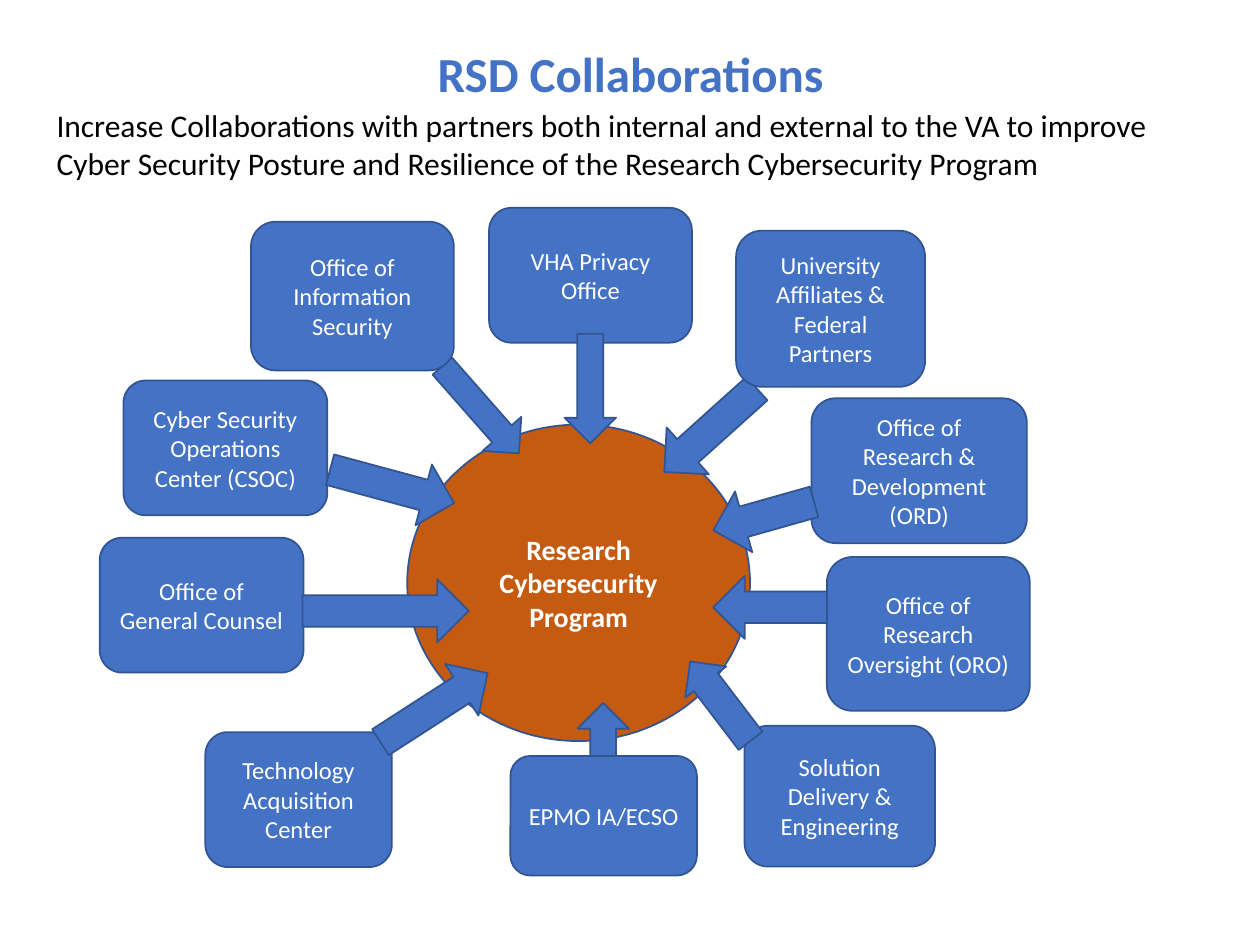
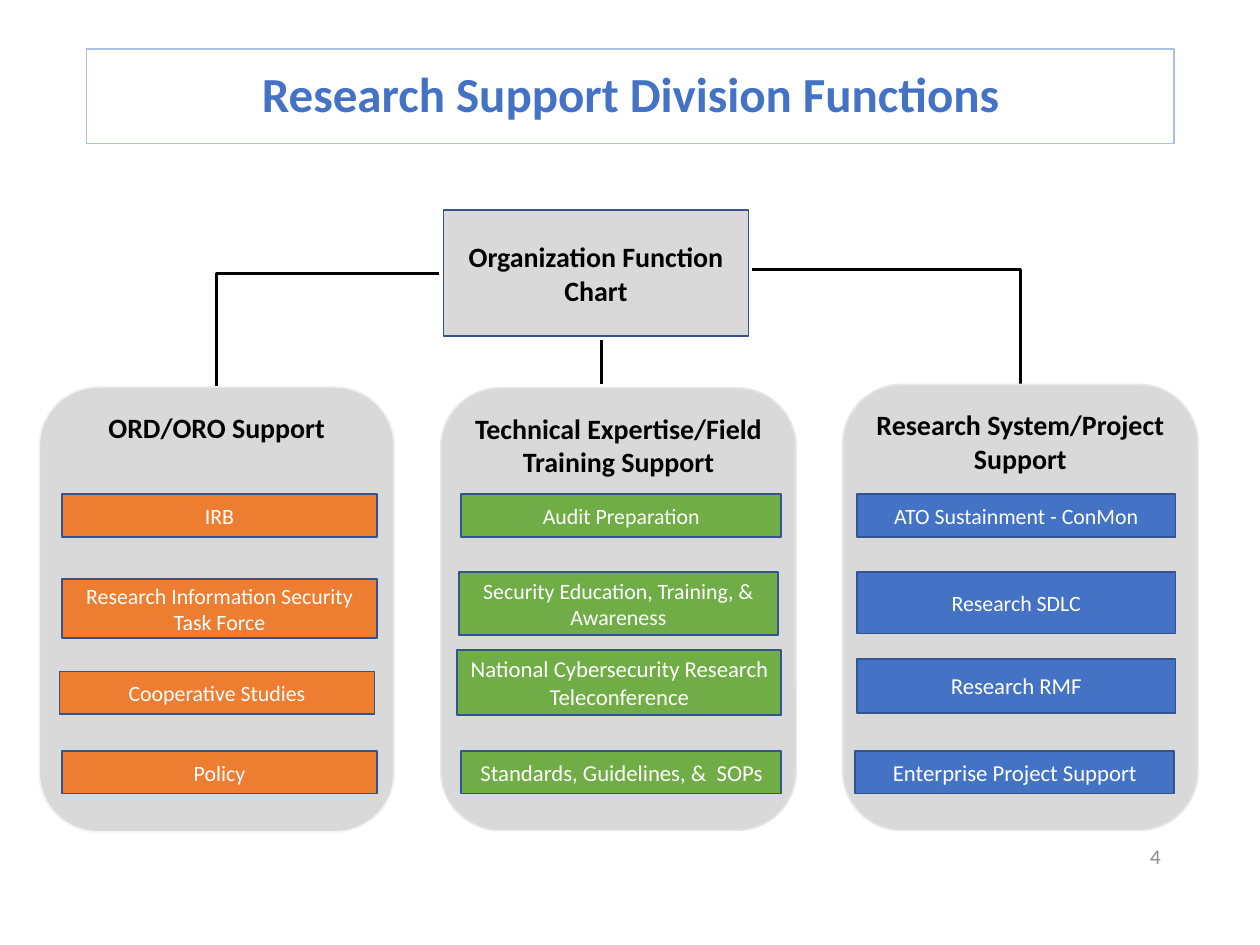
from lxml import etree
from pptx import Presentation
from pptx.dml.color import RGBColor
from pptx.enum.shapes import MSO_CONNECTOR, MSO_SHAPE
from pptx.enum.text import MSO_ANCHOR, PP_ALIGN
from pptx.oxml.ns import qn
from pptx.util import Cm, Pt

RECTANGLE, ROUNDED = MSO_SHAPE.RECTANGLE, MSO_SHAPE.ROUNDED_RECTANGLE
ELLIPSE, DOWN_ARROW = MSO_SHAPE.OVAL, MSO_SHAPE.DOWN_ARROW
STRAIGHT, ELBOW = MSO_CONNECTOR.STRAIGHT, MSO_CONNECTOR.ELBOW
TOP, MIDDLE = MSO_ANCHOR.TOP, MSO_ANCHOR.MIDDLE
LEFT, CENTER, RIGHT = PP_ALIGN.LEFT, PP_ALIGN.CENTER, PP_ALIGN.RIGHT

FONT = "Calibri"
BLUE, NAVY, RUST = "4472C4", "325491", "C55A11"
ORANGE, GREEN = "ED7D31", "70AD47"
GRAY, PALE_BLUE, PAGE_GRAY = "D9D9D9", "ABC0E4", "8C8C8C"
WHITE, BLACK = "FFFFFF", "000000"

# Formats for each role of text
TITLE = {"size": Pt(28), "bold": True, "color": BLUE}
BODY = {"size": Pt(18), "color": BLACK}
HUB = {"size": Pt(16), "bold": True, "color": WHITE}
PARTNER = {"size": Pt(14), "color": WHITE}
HEADING = {"size": Pt(16), "bold": True, "color": BLACK}
PAGE_NUMBER = {"size": Pt(12), "color": PAGE_GRAY}

# Partner text, its box, its arrow box, arrow rotation, arrow behind the partner;
# all in cm from the corner of the diagram
PARTNERS = [
    ("Office of Information Security", (3.05, 0.28, 4.09, 3), (7.16, 2.9, 1.04, 2.34), 318.7, True),
    ("VHA Privacy Office", (7.85, 0, 4.09, 2.72), (9.37, 2.54, 1.04, 2.21), 0, False),
    ("University Affiliates & Federal Partners", (12.83, 0.46, 3.81, 3.15),
     (11.68, 3.23, 1.27, 2.51), 48, True),
    ("Office of Research & Development (ORD)", (14.35, 3.84, 4.34, 2.92),
     (12.75, 5.16, 1.27, 2.11), 74.2, False),
    ("Office of Research Oversight (ORO)", (14.66, 7.04, 4.09, 3.1),
     (12.88, 6.91, 1.27, 2.29), 90, False),
    ("Solution Delivery & Engineering", (13, 10.44, 3.84, 2.84),
     (11.99, 8.94, 1.04, 2.01), 142.7, False),
    ("EPMO IA/ECSO", (8.28, 11.05, 3.76, 2.41), (9.63, 9.98, 1.04, 1.07), 180, False),
    ("Technology Acquisition Center", (2.13, 10.57, 3.76, 2.72),
     (6.12, 8.79, 1.24, 2.57), 237.2, False),
    ("Office of General Counsel", (0, 6.65, 4.11, 2.72), (5.13, 6.45, 1.27, 3.35), 270, False),
    ("Cyber Security Operations Center (CSOC)", (0.48, 3.48, 4.11, 2.72),
     (5.26, 4.32, 1.27, 2.59), 285.1, False),
]

# Heading, top, height, outline, item colour, items (text, box in the panel, size)
PANELS = [
    ("ORD/ORO Support", 7.8, 8.97, "F2F2F2", ORANGE, [
        ("IRB", (0.46, 2.16, 6.35, 0.86), 12.5),
        ("Research Information Security Task Force", (0.46, 3.88, 6.35, 1.19), 12.5),
        ("Cooperative Studies", (0.41, 5.74, 6.35, 0.86), 12.5),
        ("Policy", (0.46, 7.34, 6.35, 0.86), 12.5)]),
    ("Technical Expertise/Field Training Support", 7.82, 8.92, "E7E6E6", GREEN, [
        ("Audit Preparation", (0.41, 2.14, 6.45, 0.86), 12.5),
        ("Security Education, Training, & Awareness", (0.36, 3.71, 6.43, 1.27), 12.5),
        ("National Cybersecurity Research Teleconference", (0.33, 5.29, 6.53, 1.3), 13),
        ("Standards, Guidelines, &  SOPs", (0.41, 7.32, 6.45, 0.86), 13)]),
    ("Research System/Project Support", 7.75, 8.99, "E7E6E6", BLUE, [
        ("ATO Sustainment - ConMon", (0.28, 2.21, 6.43, 0.86), 12.5),
        ("Research SDLC", (0.28, 3.78, 6.43, 1.24), 12.5),
        ("Research RMF", (0.28, 5.53, 6.43, 1.09), 13),
        ("Enterprise Project Support", (0.25, 7.39, 6.43, 0.86), 13)]),
]
PANEL_LEFT, PANEL_STEP, PANEL_WIDTH = 0.79, 8.1, 7.16


def rgb(color):
    return RGBColor.from_string(color)


def inside(outer, box):
    """Shift a box by the corner of the box that holds it."""
    return (outer[0] + box[0], outer[1] + box[1], *box[2:])


def write(shape, text, style, align=CENTER, anchor=MIDDLE, spacing=None):
    frame = shape.text_frame
    frame.word_wrap = True
    frame.vertical_anchor = anchor
    paragraph = frame.paragraphs[0]
    paragraph.alignment = align
    paragraph.line_spacing = spacing
    run = paragraph.add_run()
    run.text = text
    run.font.name = FONT
    for name, value in style.items():
        if name == "color":
            run.font.color.rgb = rgb(value)
        else:
            setattr(run.font, name, value)


def add_shape(slide, kind, box, fill, line=NAVY, width=1):
    shape = slide.shapes.add_shape(kind, *map(Cm, box))
    shape.shadow.inherit = False
    if fill:
        shape.fill.solid()
        shape.fill.fore_color.rgb = rgb(fill)
    else:
        shape.fill.background()
    shape.line.color.rgb = rgb(line)
    shape.line.width = Pt(width)
    return shape


def add_text(slide, box, text, style, **layout):
    write(slide.shapes.add_textbox(*map(Cm, box)), text, style, **layout)


def add_line(slide, kind, start, end):
    connector = slide.shapes.add_connector(kind, *map(Cm, start + end))
    connector.line.color.rgb = rgb(BLACK)
    connector.line.width = Pt(1.5)
    properties = connector._element.spPr
    etree.SubElement(properties, qn("a:effectLst"))
    if kind == ELBOW:  # a single bend
        properties.find(qn("a:prstGeom")).set("prst", "bentConnector2")


def add_partner(slide, diagram, text, box, arrow_box, rotation, arrow_behind):
    def draw_box():
        write(add_shape(slide, ROUNDED, inside(diagram, box), BLUE), text, PARTNER)

    def draw_arrow():
        arrow = add_shape(slide, DOWN_ARROW, inside(diagram, arrow_box), BLUE)
        arrow.rotation = rotation
        if text.startswith("Solution"):
            arrow.adjustments[0] = 0.58

    steps = (draw_arrow, draw_box) if arrow_behind else (draw_box, draw_arrow)
    for draw in steps:
        draw()


def add_diagram(slide, diagram):
    hub = add_shape(slide, ELLIPSE, inside(diagram, (6.2, 4.37, 6.91, 6.38)), RUST)
    write(hub, "Research Cybersecurity Program", HUB)
    for partner in PARTNERS:
        add_partner(slide, diagram, *partner)


def add_panel(slide, box, heading, outline, color, items):
    panel = add_shape(slide, ROUNDED, box, GRAY, outline)
    write(panel, heading, HEADING, anchor=TOP)
    for text, item_box, size in items:
        item = add_shape(slide, RECTANGLE, inside(box, item_box), color)
        write(item, text, {"size": Pt(size), "color": WHITE})


def build_collaborations(slide):
    add_text(slide, (1.75, 1.04, 21.92, 0.99), "RSD Collaborations", TITLE, spacing=0.9)
    add_text(slide, (0.89, 2.01, 23.01, 1.8),
             "Increase Collaborations with partners both internal and external to the VA to "
             "improve Cyber Security Posture and Resilience of the Research Cybersecurity Program",
             BODY, align=LEFT, anchor=TOP)
    add_diagram(slide, (2.01, 4.19))


def build_functions(slide):
    # Framed title and page number
    title = add_shape(slide, RECTANGLE, (1.75, 0.99, 21.92, 1.91), None, PALE_BLUE, 0.75)
    write(title, "Research Support Division Functions", TITLE, spacing=0.9)
    add_text(slide, (17.93, 16.74, 5.72, 1.02), "4", PAGE_NUMBER, align=RIGHT)

    # Root of the chart and its branches
    add_line(slide, ELBOW, (8.86, 5.51), (4.37, 7.8))
    add_line(slide, ELBOW, (15.16, 5.44), (20.57, 7.75))
    add_line(slide, STRAIGHT, (12.12, 6.86), (12.12, 7.75))
    root = add_shape(slide, RECTANGLE, (8.94, 4.24, 6.15, 2.54), GRAY)
    write(root, "Organization Function Chart", HEADING)

    # One panel per function
    for column, (heading, top, height, outline, color, items) in enumerate(PANELS):
        box = (PANEL_LEFT + column * PANEL_STEP, top, PANEL_WIDTH, height)
        add_panel(slide, box, heading, outline, color, items)


def main():
    presentation = Presentation()
    presentation.slide_width, presentation.slide_height = Cm(25.4), Cm(19.05)
    blank = presentation.slide_layouts[6]
    for build in (build_collaborations, build_functions):
        build(presentation.slides.add_slide(blank))
    presentation.save("out.pptx")


if __name__ == "__main__":
    main()
